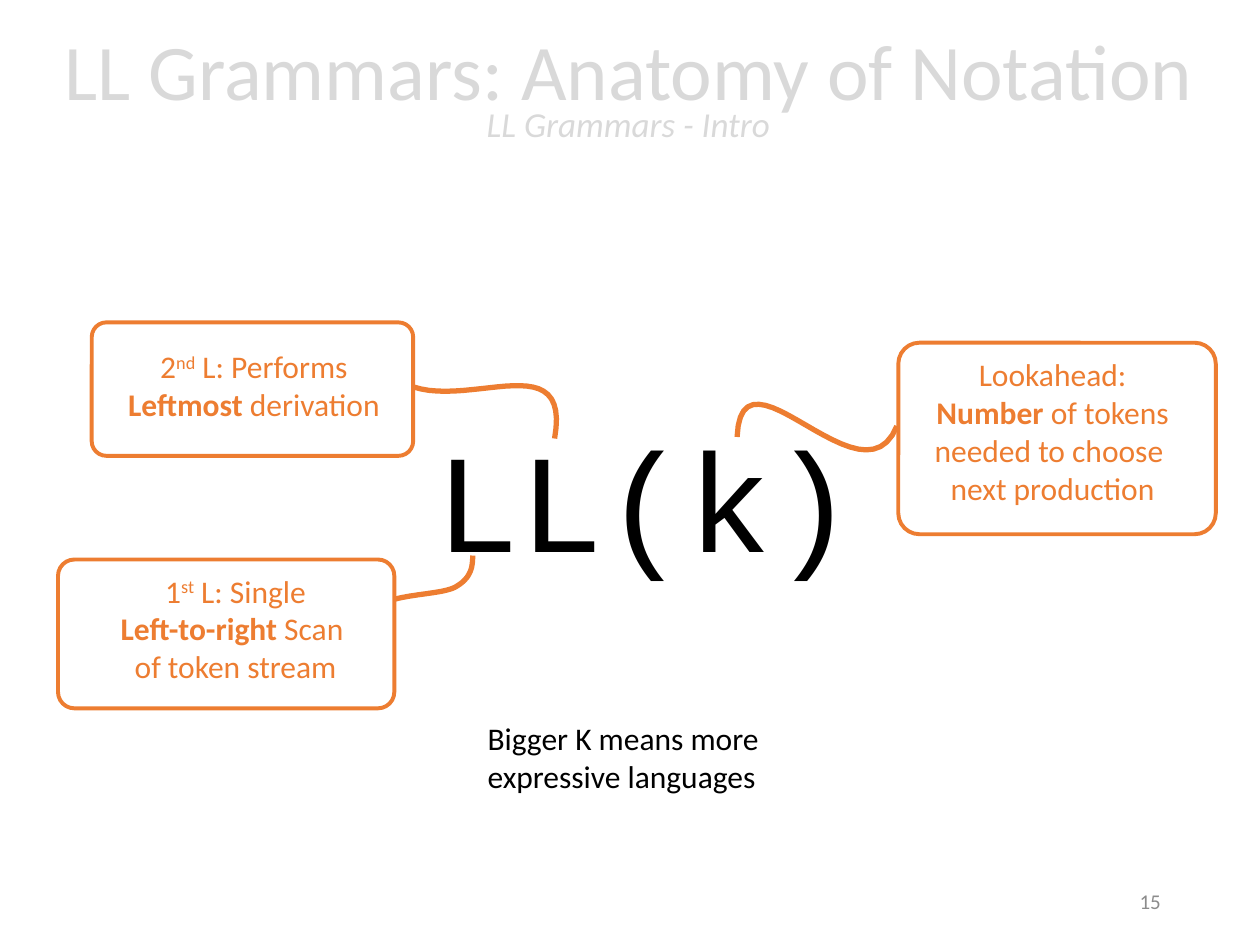
from pptx import Presentation
from pptx.dml.color import RGBColor
from pptx.enum.shapes import MSO_SHAPE
from pptx.enum.text import MSO_ANCHOR, MSO_AUTO_SIZE, PP_ALIGN
from pptx.util import Cm, Pt

ORANGE = RGBColor(0xED, 0x7D, 0x31)
WHITE = RGBColor(0xFF, 0xFF, 0xFF)
BLACK = RGBColor(0, 0, 0)
PALE = RGBColor(0xD9, 0xD9, 0xD9)
GRAY = RGBColor(0x8C, 0x8C, 0x8C)
STEPS = 24


def bezier(a, b, c, d, t):
    u = 1 - t
    return tuple(
        Cm(u**3 * p + 3 * u * u * t * q + 3 * u * t * t * r + t**3 * s)
        for p, q, r, s in zip(a, b, c, d)
    )


class Deck:
    font = "Calibri"
    mono = "Courier New"

    def __init__(self):
        self.file = Presentation()
        self.file.slide_width, self.file.slide_height = Cm(25.4), Cm(19.05)
        self.slide = self.file.slides.add_slide(self.file.slide_layouts[5])

    def style(self, para, size, color, align, font=None):
        para.alignment = align
        para.font.name = font or self.font
        para.font.size = Pt(size)
        para.font.color.rgb = color

    def title(self, box, head, sub):
        shape = self.slide.shapes.title
        shape.left, shape.top, shape.width, shape.height = map(Cm, box)
        frame = shape.text_frame
        frame.auto_size = MSO_AUTO_SIZE.NONE
        frame.vertical_anchor = MSO_ANCHOR.MIDDLE
        para = frame.paragraphs[0]
        self.style(para, 45, PALE, PP_ALIGN.CENTER)
        para.line_spacing = 0.7
        para.add_run().text = head
        para.add_line_break()
        run = para.add_run()
        run.text = sub
        run.font.size = Pt(20)
        run.font.italic = True

    def curve(self, *points):
        path = [
            bezier(*points[i:i + 4], step / STEPS)
            for i in range(0, len(points) - 1, 3)
            for step in range(1, STEPS + 1)
        ]
        start = map(Cm, points[0])
        build = self.slide.shapes.build_freeform(*start)
        build.add_line_segments(path, close=False)
        shape = build.convert_to_shape()
        shape.shadow.inherit = False
        shape.fill.background()
        shape.line.color.rgb = ORANGE
        shape.line.width = Pt(3)

    def box(self, *box):
        shape = self.slide.shapes.add_shape(
            MSO_SHAPE.ROUNDED_RECTANGLE, *map(Cm, box))
        shape.adjustments[0] = 0.11
        shape.shadow.inherit = False
        shape.fill.solid()
        shape.fill.fore_color.rgb = WHITE
        shape.line.color.rgb = ORANGE
        shape.line.width = Pt(2.25)

    def text(self, box, lines, size=18, color=BLACK, align=PP_ALIGN.LEFT,
             font=None, wrap=False, anchor=MSO_ANCHOR.TOP):
        frame = self.slide.shapes.add_textbox(*map(Cm, box)).text_frame
        frame.word_wrap = wrap
        frame.vertical_anchor = anchor
        if not wrap:
            frame.auto_size = MSO_AUTO_SIZE.SHAPE_TO_FIT_TEXT
        for i, line in enumerate(lines):
            para = frame.add_paragraph() if i else frame.paragraphs[0]
            self.style(para, size, color, align, font)
            for words, mark in line:
                run = para.add_run()
                run.text = words
                if mark == "bold":
                    run.font.bold = True
                elif mark == "super":
                    run._r.get_or_add_rPr().set("baseline", "30000")

    def note(self, box, *lines):
        self.text(box, lines, color=ORANGE, align=PP_ALIGN.CENTER)


def main():
    deck = Deck()
    deck.curve((7.19, 13.89), (7.19, 13.26), (7.19, 12.65), (7.52, 12.29),
               (7.85, 11.96), (8.84, 12.01), (9.17, 11.84),
               (9.5, 11.66), (9.53, 11.43), (9.53, 11.2))
    deck.curve((8.33, 7.8), (9.55, 8.2), (11.51, 6.99), (11.18, 8.84))
    deck.curve((18.08, 8.59), (17.4, 10.29), (14.94, 6.76), (14.86, 8.81))
    deck.box(18.11, 6.91, 6.4, 3.86)
    deck.box(1.17, 11.28, 6.78, 3)
    deck.box(1.85, 6.5, 6.48, 2.69)
    deck.title((0.3, 0.08, 24.74, 3.68),
               "LL Grammars: Anatomy of Notation", "LL Grammars - Intro")
    deck.text((17.93, 17.65, 5.72, 1.02), [[("15", "")]], 12, GRAY,
              PP_ALIGN.RIGHT, wrap=True, anchor=MSO_ANCHOR.MIDDLE)
    deck.text((8.53, 8.2, 9.07, 3.68), [[("LL(k)", "")]], 80, font=deck.mono)
    deck.note((1.55, 11.4, 6.4, 2.57),
              [("1", ""), ("st", "super"), (" L: Single", "")],
              [("Left-to-right", "bold"), (" Scan ", "")],
              [("of token stream", "")])
    deck.note((1.88, 6.88, 6.48, 1.8),
              [("2", ""), ("nd", "super"), (" L: Performs", "")],
              [("Leftmost ", "bold"), ("derivation", "")])
    deck.note((18.21, 7.04, 6.02, 3.33),
              [("Lookahead:", "")],
              [("Number", "bold"), (" of tokens", "")],
              [("needed to choose ", "")],
              [("next production", "")])
    deck.text((9.58, 14.38, 6.2, 1.8),
              [[("Bigger K means more", "")], [("expressive languages", "")]])
    deck.file.save("out.pptx")


if __name__ == "__main__":
    main()
